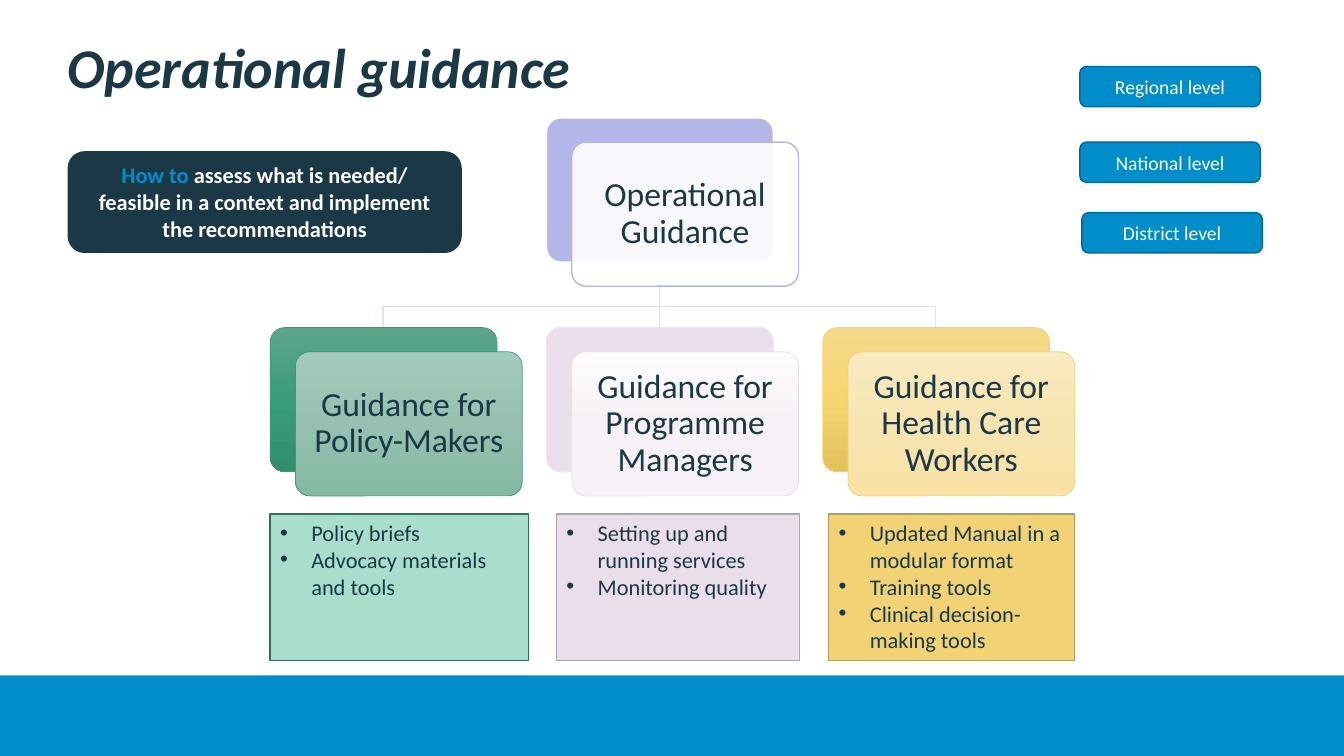
from copy import deepcopy
from dataclasses import dataclass

from lxml.etree import SubElement
from pptx import Presentation
from pptx.dml.color import RGBColor as Rgb
from pptx.enum.shapes import MSO_CONNECTOR as Link, MSO_SHAPE as Form
from pptx.enum.text import MSO_ANCHOR as Anchor, PP_ALIGN as Align
from pptx.oxml.ns import qn
from pptx.shapes.autoshape import Shape
from pptx.slide import Slide
from pptx.text.text import TextFrame
from pptx.util import Emu, Pt

UNIT = 9144  # EMU in one px, 100 px to the inch


@dataclass(frozen=True)
class Theme:
    font: str = "Calibri"
    ink: str = "1A3845"
    blue: str = "008DC9"
    edge: str = "006895"
    white: str = "FFFFFF"
    link: str = "EADEEA"
    title: int = 40
    card: int = 24
    body: int = 16
    tag: int = 14


THEME = Theme()


@dataclass(frozen=True)
class Box:
    x: int
    y: int
    w: int
    h: int


@dataclass(frozen=True)
class Skin:
    """Fill colours from top to bottom, then the outline."""
    fill: tuple[str, ...]
    line: str = ""
    width: float = 1
    alpha: int = 100


@dataclass(frozen=True)
class Card:
    text: str
    x: int
    y: int
    back: Skin
    front: Skin


@dataclass(frozen=True)
class Panel:
    x: int
    w: int
    skin: Skin
    items: tuple[str, ...]


@dataclass(frozen=True)
class Tag:
    text: str
    x: int
    y: int


CARD_W, CARD_H, SHIFT_X, SHIFT_Y = 225, 143, 25, 24
LEFT, STEP, ROW, BAR = 268, 274, 325, 304
COLS = [LEFT + STEP * i for i in range(3)]
TOP = 117

CARDS = (
    Card("Operational Guidance", COLS[1], TOP,
         Skin(("B3B6E7",), "FFFFFF"), Skin(("FFFFFF",), "B3B6E7", alpha=90)),
    Card("Guidance for Policy-Makers", COLS[0], ROW,
         Skin(("5CA58A", "399C7D", "2F8F70"), "3E987B", 0.5),
         Skin(("A3CBBB", "97C0B0", "84BAA4"), "3E987B", 0.5)),
    Card("Guidance for Programme Managers", COLS[1], ROW,
         Skin(("EADEEA",), "E7E7E7"),
         Skin(("FDFCFD", "F6F1F6", "F5EFF5"), "EADEEA", 0.5)),
    Card("Guidance for Health Care Workers", COLS[2], ROW,
         Skin(("F4D988", "F7D670", "E3C25C"), "F1D376", 0.5),
         Skin(("F9EAC0", "F7E4B1", "F9E2A4"), "F1D376", 0.5)),
)
PANELS = (
    Panel(268, 256, Skin(("ABDDCD",), "2E705B"),
          ("Policy briefs", "Advocacy materials and tools")),
    Panel(552, 241, Skin(("EADEEA",), "ADA4AD"),
          ("Setting up and running services", "Monitoring quality")),
    Panel(822, 244, Skin(("F1D376",), "B29C57"),
          ("Updated Manual in a modular format", "Training tools",
           "Clinical decision-making tools")),
)
TAGS = (
    Tag("Regional level", 1071, 66),
    Tag("National level", 1071, 141),
    Tag("District level", 1073, 211),
)


def px(n: int) -> Emu:
    return Emu(n * UNIT)


def place(box: Box) -> tuple[Emu, ...]:
    return px(box.x), px(box.y), px(box.w), px(box.h)


def paint(shape: Shape, skin: Skin) -> None:
    fill, props = shape.fill, shape._element.spPr
    if len(skin.fill) == 1:
        fill.solid()
        fill.fore_color.rgb = Rgb.from_string(skin.fill[0])
        if skin.alpha < 100:
            tint = props.find(f"{qn('a:solidFill')}/{qn('a:srgbClr')}")
            SubElement(tint, qn("a:alpha"), val=str(skin.alpha * 1000))
    else:
        fill.gradient()
        fill.gradient_angle = 270
        stops = props.find(f"{qn('a:gradFill')}/{qn('a:gsLst')}")
        stops.insert(1, deepcopy(stops[0]))
        for i, (stop, tone) in enumerate(zip(fill.gradient_stops, skin.fill)):
            stop.position = i / 2
            stop.color.rgb = Rgb.from_string(tone)
    if skin.line:
        shape.line.color.rgb = Rgb.from_string(skin.line)
        shape.line.width = Pt(skin.width)
    else:
        shape.line.fill.background()


def draw(slide: Slide, form: Form, box: Box, skin: Skin) -> Shape:
    shape = slide.shapes.add_shape(form, *place(box))
    shape.shadow.inherit = False
    paint(shape, skin)
    return shape


def setup(frame: TextFrame, anchor: Anchor, inset: int | None = None) -> None:
    frame.word_wrap = True
    frame.vertical_anchor = anchor
    if inset is not None:
        frame.margin_left = frame.margin_right = px(inset)
        frame.margin_top = frame.margin_bottom = px(inset)


def write(para, text: str, size: int, tone: str, bold: bool = False,
          slant: bool = False) -> None:
    run = para.add_run()
    run.text = text
    font = run.font
    font.name, font.size = THEME.font, Pt(size)
    font.bold, font.italic = bold, slant
    font.color.rgb = Rgb.from_string(tone)


def add_title(slide: Slide, text: str) -> None:
    frame = slide.shapes.add_textbox(*place(Box(67, 40, 1150, 80))).text_frame
    setup(frame, Anchor.TOP, 0)
    para = frame.paragraphs[0]
    para.line_spacing = 0.9
    write(para, text, THEME.title, THEME.ink, bold=True, slant=True)


def add_link(slide: Slide, x1: int, y1: int, x2: int, y2: int) -> None:
    link = slide.shapes.add_connector(
        Link.STRAIGHT, px(x1), px(y1), px(x2), px(y2))
    link.line.color.rgb = Rgb.from_string(THEME.link)
    link.line.width = Pt(1)
    SubElement(link._element.spPr, qn("a:effectLst"))


def add_tree(slide: Slide) -> None:
    """Joins the top card to the three below it."""
    mids = [x + CARD_W // 2 for x in COLS]
    add_link(slide, mids[1], TOP + CARD_H, mids[1], BAR)
    add_link(slide, mids[0], BAR, mids[2], BAR)
    for x in mids:
        add_link(slide, x, BAR, x, ROW)


def add_card(slide: Slide, card: Card) -> None:
    for skin, n in ((card.back, 0), (card.front, 1)):
        box = Box(card.x + n * SHIFT_X, card.y + n * SHIFT_Y, CARD_W, CARD_H)
        shape = draw(slide, Form.ROUNDED_RECTANGLE, box, skin)
        shape.adjustments[0] = 0.1
    setup(shape.text_frame, Anchor.MIDDLE, 10)
    para = shape.text_frame.paragraphs[0]
    para.alignment, para.line_spacing = Align.CENTER, 0.9
    write(para, card.text, THEME.card, THEME.ink)


def add_panel(slide: Slide, panel: Panel) -> None:
    box = Box(panel.x, 510, panel.w, 145)
    frame = draw(slide, Form.RECTANGLE, box, panel.skin).text_frame
    setup(frame, Anchor.TOP)
    for i, item in enumerate(panel.items):
        para = frame.add_paragraph() if i else frame.paragraphs[0]
        para.alignment = Align.LEFT
        props = para._p.get_or_add_pPr()
        props.set("marL", str(px(31)))
        props.set("indent", str(-px(31)))
        SubElement(props, qn("a:buFont"), typeface="Arial")
        SubElement(props, qn("a:buChar"), char="•")
        write(para, item, THEME.body, THEME.ink)


def add_note(slide: Slide) -> None:
    box = Box(67, 150, 391, 101)
    frame = draw(slide, Form.ROUNDED_RECTANGLE, box, Skin((THEME.ink,))).text_frame
    setup(frame, Anchor.TOP)
    para = frame.paragraphs[0]
    para.alignment = Align.CENTER
    write(para, "How to ", THEME.body, THEME.blue, bold=True)
    write(para, "assess what is needed/", THEME.body, THEME.white, bold=True)
    para.add_line_break()
    write(para, "feasible in a context and implement the recommendations",
          THEME.body, THEME.white, bold=True)


def add_tag(slide: Slide, tag: Tag) -> None:
    skin = Skin((THEME.blue,), THEME.edge)
    box = Box(tag.x, tag.y, 179, 40)
    frame = draw(slide, Form.ROUNDED_RECTANGLE, box, skin).text_frame
    setup(frame, Anchor.MIDDLE)
    para = frame.paragraphs[0]
    para.alignment = Align.CENTER
    write(para, tag.text, THEME.tag, THEME.white)


def main() -> None:
    deck = Presentation()
    deck.slide_width, deck.slide_height = px(1333), px(750)
    slide = deck.slides.add_slide(deck.slide_layouts[6])
    draw(slide, Form.RECTANGLE, Box(0, 670, 1333, 80), Skin((THEME.blue,)))
    add_title(slide, "Operational guidance")
    add_tree(slide)
    for card in CARDS:
        add_card(slide, card)
    for panel in PANELS:
        add_panel(slide, panel)
    add_note(slide)
    for tag in TAGS:
        add_tag(slide, tag)
    deck.save("out.pptx")


if __name__ == "__main__":
    main()
